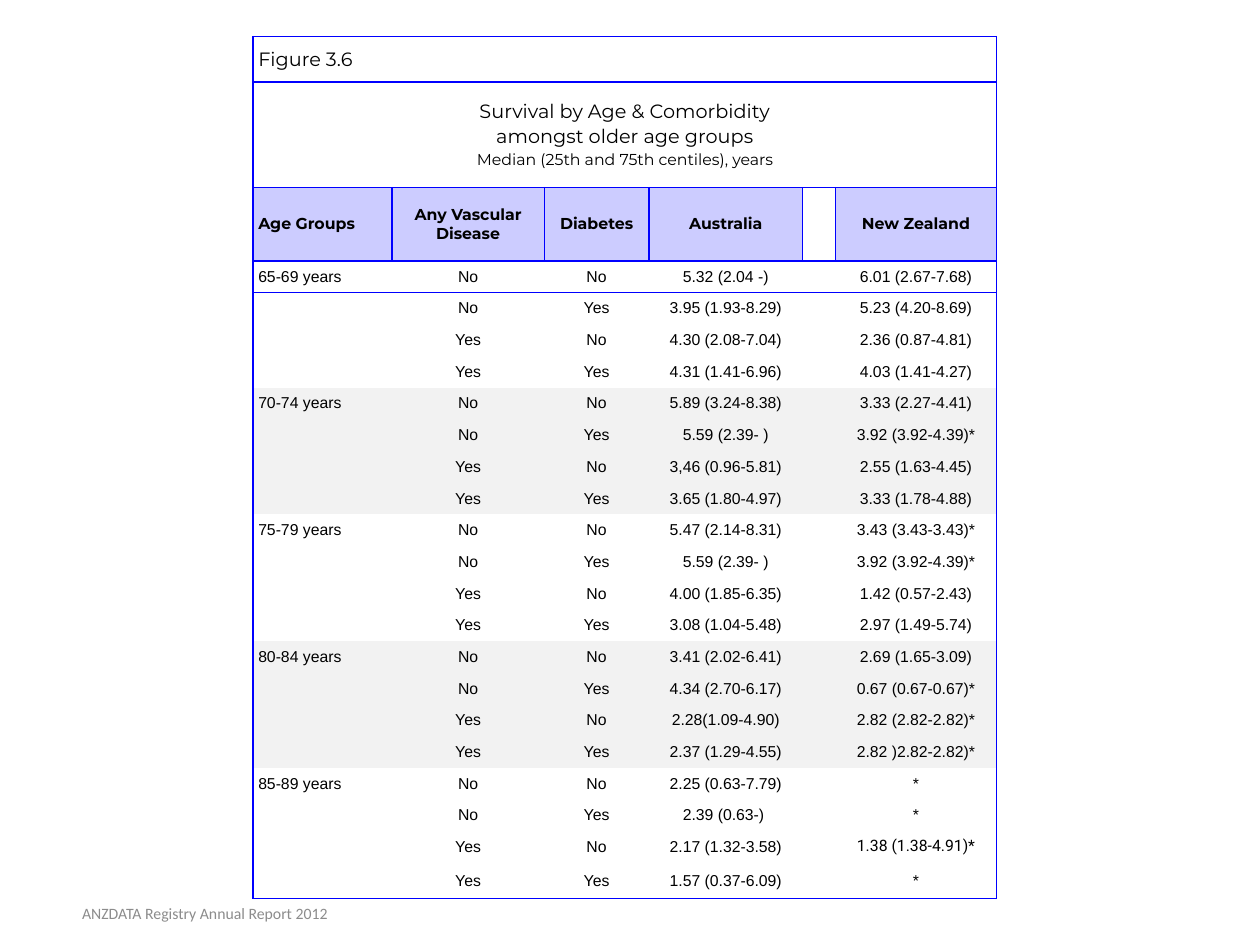
from lxml import etree
from pptx import Presentation
from pptx import util as u
from pptx.dml.color import RGBColor
from pptx.enum import text
from pptx.oxml import ns

COLOURS = {"ink": "000000", "rule": "0000FF", "header": "CCCCFF", "band": "F2F2F2", "footer": "8C8C8C"}
COLUMN_WIDTHS = [1.1, 1.21, 0.83, 1.22, 0.26, 1.28]
HEAD_HEIGHTS = [0.36, 0.84, 0.58]
LAST_HEIGHT = 0.28
NO_STYLE = "{2D5ABB26-0587-4C30-8999-92F81FD0307C}"
TITLE = [("Survival by Age & Comorbidity", 11), ("amongst older age groups", 11),
         ("Median (25th and 75th centiles), years", 9)]
HEADERS = ["Age Groups", "Any Vascular Disease", "Diabetes", "Australia", "", "New Zealand"]
COMORBIDITIES = [("No", "No"), ("No", "Yes"), ("Yes", "No"), ("Yes", "Yes")]
SURVIVAL = {
    "65-69 years": [("5.32 (2.04 -)", "6.01 (2.67-7.68)"), ("3.95 (1.93-8.29)", "5.23 (4.20-8.69)"),
                    ("4.30 (2.08-7.04)", "2.36 (0.87-4.81)"), ("4.31 (1.41-6.96)", "4.03 (1.41-4.27)")],
    "70-74 years": [("5.89 (3.24-8.38)", "3.33 (2.27-4.41)"), ("5.59 (2.39- )", "3.92 (3.92-4.39)*"),
                    ("3,46 (0.96-5.81)", "2.55 (1.63-4.45)"), ("3.65 (1.80-4.97)", "3.33 (1.78-4.88)")],
    "75-79 years": [("5.47 (2.14-8.31)", "3.43 (3.43-3.43)*"), ("5.59 (2.39- )", "3.92 (3.92-4.39)*"),
                    ("4.00 (1.85-6.35)", "1.42 (0.57-2.43)"), ("3.08 (1.04-5.48)", "2.97 (1.49-5.74)")],
    "80-84 years": [("3.41 (2.02-6.41)", "2.69 (1.65-3.09)"), ("4.34 (2.70-6.17)", "0.67 (0.67-0.67)*"),
                    ("2.28(1.09-4.90)", "2.82 (2.82-2.82)*"), ("2.37 (1.29-4.55)", "2.82 )2.82-2.82)*")],
    "85-89 years": [("2.25 (0.63-7.79)", "*"), ("2.39 (0.63-) ", "*"),
                    ("2.17 (1.32-3.58)", "1.38 (1.38-4.91)*"), ("1.57 (0.37-6.09)", "*")],
}


def add_run(paragraph, words, size, font, colour="ink", bold=False):
    """Add one formatted run to a paragraph."""
    run = paragraph.add_run()
    run.text = words
    run.font.size = u.Pt(size)
    run.font.name = font
    run.font.bold = bold
    run.font.color.rgb = RGBColor.from_string(COLOURS[colour])


def draw_borders(cell, sides):
    """Draw one-point rules on the sides named by the letters L, R, T and B."""
    properties = cell._tc.get_or_add_tcPr()
    for side in sides:
        line = etree.SubElement(properties, ns.qn(f"a:ln{side}"), w=str(u.Pt(1)))
        fill = etree.SubElement(line, ns.qn("a:solidFill"))
        etree.SubElement(fill, ns.qn("a:srgbClr"), val=COLOURS["rule"])


def format_cell(cell, sides="", fill=None, margin=0.02):
    """Set the borders, fill, margins and anchor of a cell."""
    draw_borders(cell, sides)
    if fill:
        cell.fill.solid()
        cell.fill.fore_color.rgb = RGBColor.from_string(COLOURS[fill])
    else:
        cell.fill.background()
    cell.margin_left = cell.margin_right = u.Inches(0.04)
    cell.margin_top = cell.margin_bottom = u.Inches(margin)
    cell.vertical_anchor = text.MSO_ANCHOR.MIDDLE


def write_cell(cell, words, column, font, bold=False):
    """Write a cell's text, left in the first column and centred elsewhere."""
    paragraph = cell.text_frame.paragraphs[0]
    if not words:
        paragraph._p.get_or_add_endParaRPr().set("sz", "900")
        return
    paragraph.alignment = text.PP_ALIGN.CENTER if column else text.PP_ALIGN.LEFT
    if font == "Roboto":
        paragraph.line_spacing = 0.75
    add_run(paragraph, words, 9, font, bold=bold)


def fill_heading(table):
    """Fill the figure number, the title and the column headers."""
    for row in range(2):
        for column in range(len(HEADERS)):
            format_cell(table.cell(row, column), "LRTB", margin=0.04)
        table.cell(row, 0).merge(table.cell(row, len(HEADERS) - 1))
    add_run(table.cell(0, 0).text_frame.paragraphs[0], "Figure 3.6", 11, "Montserrat")
    frame = table.cell(1, 0).text_frame
    for index, (words, size) in enumerate(TITLE):
        paragraph = frame.add_paragraph() if index else frame.paragraphs[0]
        paragraph.alignment = text.PP_ALIGN.CENTER
        if index:
            paragraph.space_before = u.Pt(1)
        add_run(paragraph, words, size, "Montserrat")
    for column, words in enumerate(HEADERS):
        cell = table.cell(2, column)
        format_cell(cell, "LRTB", "header" if words else None)
        write_cell(cell, words, column, "Montserrat", bold=True)


def fill_body(table):
    """Fill four comorbidity rows for each age group, shading every second group."""
    last_row = len(table.rows) - 1
    row = len(HEAD_HEIGHTS)
    for group, (age, medians) in enumerate(SURVIVAL.items()):
        for index, (comorbidity, (australia, new_zealand)) in enumerate(zip(COMORBIDITIES, medians)):
            values = [age if index == 0 else "", *comorbidity, australia, "", new_zealand]
            for column, words in enumerate(values):
                sides = (("L" if column == 0 else "") + ("R" if column == len(values) - 1 else "")
                         + ("T" if row == len(HEAD_HEIGHTS) else "") + ("B" if row == last_row else ""))
                cell = table.cell(row, column)
                format_cell(cell, sides, "band" if group % 2 else None)
                write_cell(cell, words, column, "Roboto" if words == "1.38 (1.38-4.91)*" else "Arial")
            row += 1


def add_survival_table(slide, left, top, width, height):
    """Place the survival table in the given box."""
    body_rows = len(SURVIVAL) * len(COMORBIDITIES)
    shape = slide.shapes.add_table(len(HEAD_HEIGHTS) + body_rows, len(HEADERS), left, top, width, height)
    table = shape.table
    table.first_row = table.horz_banding = False
    table._tbl.tblPr.find(ns.qn("a:tableStyleId")).text = NO_STYLE
    for column, column_width in zip(table.columns, COLUMN_WIDTHS):
        column.width = u.Inches(column_width)
    used = u.Inches(sum(HEAD_HEIGHTS) + LAST_HEIGHT)
    body_height = (height - used) // (body_rows - 1)
    heights = [u.Inches(head) for head in HEAD_HEIGHTS] + [body_height] * (body_rows - 1) + [u.Inches(LAST_HEIGHT)]
    for row, row_height in zip(table.rows, heights):
        row.height = row_height
    fill_heading(table)
    fill_body(table)


def add_footer(slide, left, top, width, height):
    """Place the report name in the given box."""
    frame = slide.shapes.add_textbox(left, top, width, height).text_frame
    frame.word_wrap = True
    frame.vertical_anchor = text.MSO_ANCHOR.MIDDLE
    paragraph = frame.paragraphs[0]
    paragraph.alignment = text.PP_ALIGN.CENTER
    add_run(paragraph, "ANZDATA Registry Annual Report 2012", 9, "Calibri", "footer")


def main():
    """Build and save the slide."""
    presentation = Presentation()
    presentation.slide_width = u.Inches(10)
    presentation.slide_height = u.Inches(7.5)
    slide = presentation.slides.add_slide(presentation.slide_layouts[6])
    add_survival_table(slide, u.Inches(2.01), u.Inches(0.29), u.Inches(5.9), u.Inches(6.84))
    add_footer(slide, u.Inches(0.04), u.Inches(7.05), u.Inches(3.17), u.Inches(0.4))
    presentation.save("out.pptx")


if __name__ == "__main__":
    main()
